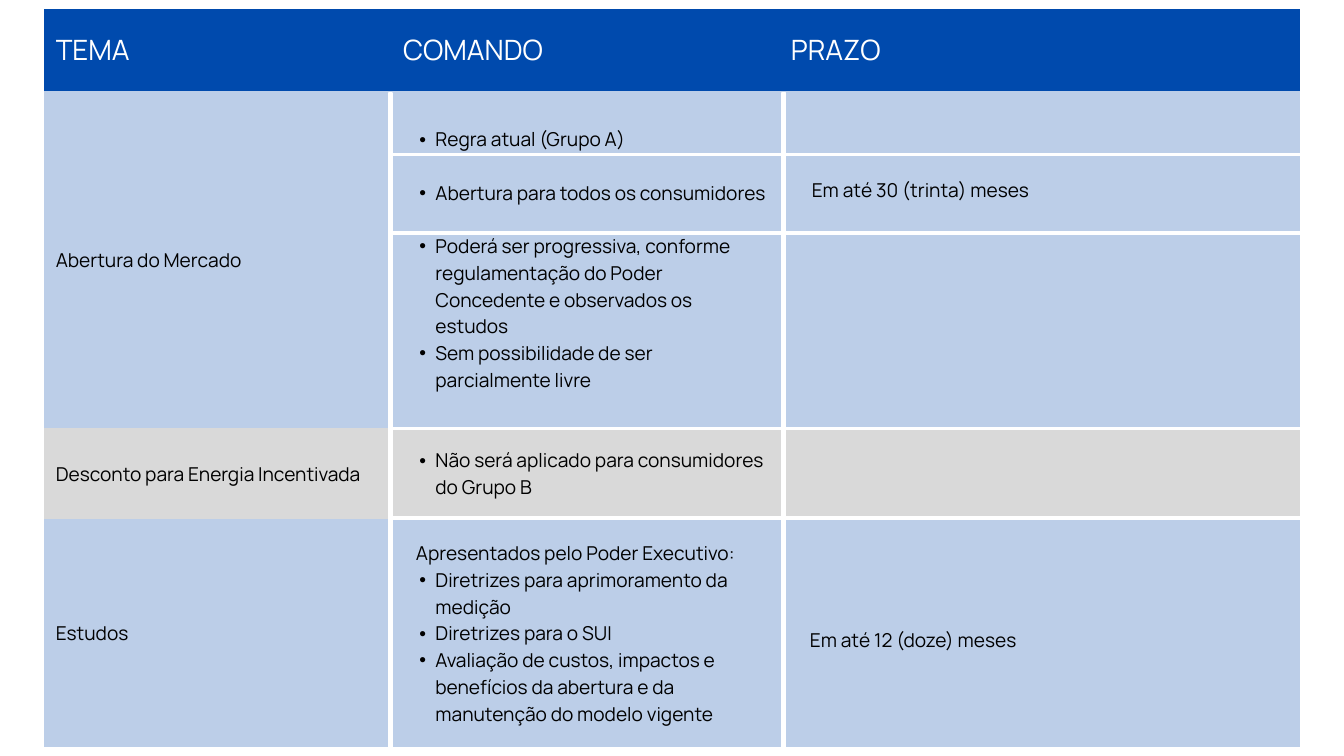
from lxml.etree import SubElement
from pptx import Presentation
from pptx.dml.color import RGBColor
from pptx.enum.shapes import MSO_CONNECTOR as Conn, MSO_SHAPE as Shape
from pptx.enum.text import MSO_ANCHOR as Anchor, PP_ALIGN as Align
from pptx.oxml.ns import qn
from pptx.util import Inches, Pt

FONT = "Manrope"
COLORS = {"head": "004AAD", "blue": "BCCEE8", "gray": "D9D9D9",
          "white": "FFFFFF", "black": "000000"}
COLS = [5.17, 5.77, 7.75]
ROWS = [1.22, 5.02, 1.36, 3.39]
LINE = 28.6

# Each item: text, is it a bullet, lines of space before it
HEAD = ["TEMA", "COMANDO", "PRAZO"]
BODY = [
    ("blue", "Abertura do Mercado", [
        ("Regra atual (Grupo A)", True, 0),
        ("Abertura para todos os consumidores", True, 1),
        ("Poderá ser progressiva, conforme regulamentação do Poder "
         "Concedente e observados os estudos", True, 1),
        ("Sem possibilidade de ser parcialmente livre", True, 0)]),
    ("gray", "Desconto para Energia Incentivada", [
        ("Não será aplicado para consumidores do Grupo B", True, 0)]),
    ("blue", "Estudos", [
        ("Apresentados pelo Poder Executivo:", False, 0),
        ("Diretrizes para aprimoramento da medição", True, 0),
        ("Diretrizes para o SUI", True, 0),
        ("Avaliação de custos, impactos e benefícios da abertura e da "
         "manutenção do modelo vigente", True, 0)]),
]


def rgb(name):
    return RGBColor.from_string(COLORS[name])


def style(par, text, size, color, line):
    par.text = text
    par.line_spacing = Pt(line)
    font = par.font
    font.name, font.size, font.bold = FONT, Pt(size), False
    font.color.rgb = rgb(color)


def indent(par, left, hang=0.0):
    props = par._p.get_or_add_pPr()
    props.set("marL", str(Inches(left)))
    props.set("indent", str(Inches(-hang)))
    return props


def add_list(frame, items):
    for i, (text, dot, gap) in enumerate(items):
        par = frame.paragraphs[0] if i == 0 else frame.add_paragraph()
        par.line_spacing = Pt(LINE)
        par.space_before = Pt(gap * LINE)
        if dot:
            par.level = 1
            props = indent(par, 0.48, 0.24)
            SubElement(props, qn("a:buFont")).set("typeface", "Arial")
            SubElement(props, qn("a:buChar")).set("char", "•")
        else:
            indent(par, 0.19)
        style(par, text, 20.5, "black", LINE)


def format_cell(cell, color):
    cell.fill.solid()
    cell.fill.fore_color.rgb = rgb(color)
    cell.vertical_anchor = Anchor.MIDDLE
    cell.margin_left = cell.margin_right = Inches(0.18)
    cell.margin_top = cell.margin_bottom = Inches(0.18)
    props = cell._tc.get_or_add_tcPr()
    for i, side in enumerate(("lnL", "lnR", "lnT", "lnB")):
        edge = props.makeelement(qn(f"a:{side}"), {"w": "0"})
        SubElement(edge, qn("a:noFill"))
        props.insert(i, edge)


def add_grid(slide, x, y):
    frame = slide.shapes.add_table(len(ROWS), len(COLS), Inches(x), Inches(y),
                                   Inches(sum(COLS)), Inches(sum(ROWS)))
    table = frame.table
    table.first_row = table.horz_banding = False
    for col, width in zip(table.columns, COLS):
        col.width = Inches(width)
    for row, height in zip(table.rows, ROWS):
        row.height = Inches(height)

    # Header row
    for c, text in enumerate(HEAD):
        cell = table.cell(0, c)
        format_cell(cell, "head")
        style(cell.text_frame.paragraphs[0], text, 30, "white", 42)

    # Theme rows
    for r, (color, theme, items) in enumerate(BODY, 1):
        for c in range(len(COLS)):
            format_cell(table.cell(r, c), color)
        style(table.cell(r, 0).text_frame.paragraphs[0],
              theme, 20.5, "black", LINE)
        add_list(table.cell(r, 1).text_frame, items)


def add_rule(slide, x, y, end):
    rule = slide.shapes.add_connector(Conn.STRAIGHT, Inches(x), Inches(y),
                                      Inches(end), Inches(y))
    rule.line.color.rgb = rgb("white")
    rule.line.width = Pt(3.75)
    SubElement(rule._element.spPr, qn("a:effectLst"))


def add_bar(slide, x, y, height):
    bar = slide.shapes.add_shape(Shape.RECTANGLE, Inches(x), Inches(y),
                                 Inches(0.05), Inches(height))
    bar.shadow.inherit = False
    bar.fill.solid()
    bar.fill.fore_color.rgb = rgb("white")
    bar.line.color.rgb = rgb("white")
    bar.line.width = Pt(2)


def add_term(slide, x, y, width, text):
    frame = slide.shapes.add_textbox(Inches(x), Inches(y), Inches(width),
                                     Inches(0.4)).text_frame
    frame.word_wrap = True
    frame.margin_left = frame.margin_right = 0
    frame.margin_top = frame.margin_bottom = 0
    par = frame.paragraphs[0]
    par.alignment = Align.CENTER
    style(par, text, 20.5, "black", 28.7)


def add_region(slide, x, y):
    add_grid(slide, x, y)

    # Rules that split the first theme
    for drop in (2.17, 3.34):
        add_rule(slide, x + 5.14, y + drop, 20)

    # Deadlines
    add_term(slide, x + 11.22, y + 2.47, 3.66, "Em até 30 (trinta) meses")
    add_term(slide, x + 11.22, y + 9.16, 3.44, "Em até 12 (doze) meses")

    # Column gaps, then the rules between themes
    for shift in (5.14, 10.99):
        add_bar(slide, x + shift, y + 1.25, 9.75)
    for drop in (6.25, 7.58):
        add_rule(slide, x + 5.19, y + drop, 20)


def main():
    deck = Presentation()
    deck.slide_width, deck.slide_height = Inches(20), Inches(11.25)
    slide = deck.slides.add_slide(deck.slide_layouts[6])
    add_region(slide, 0.65, 0.13)
    deck.save("out.pptx")


if __name__ == "__main__":
    main()
